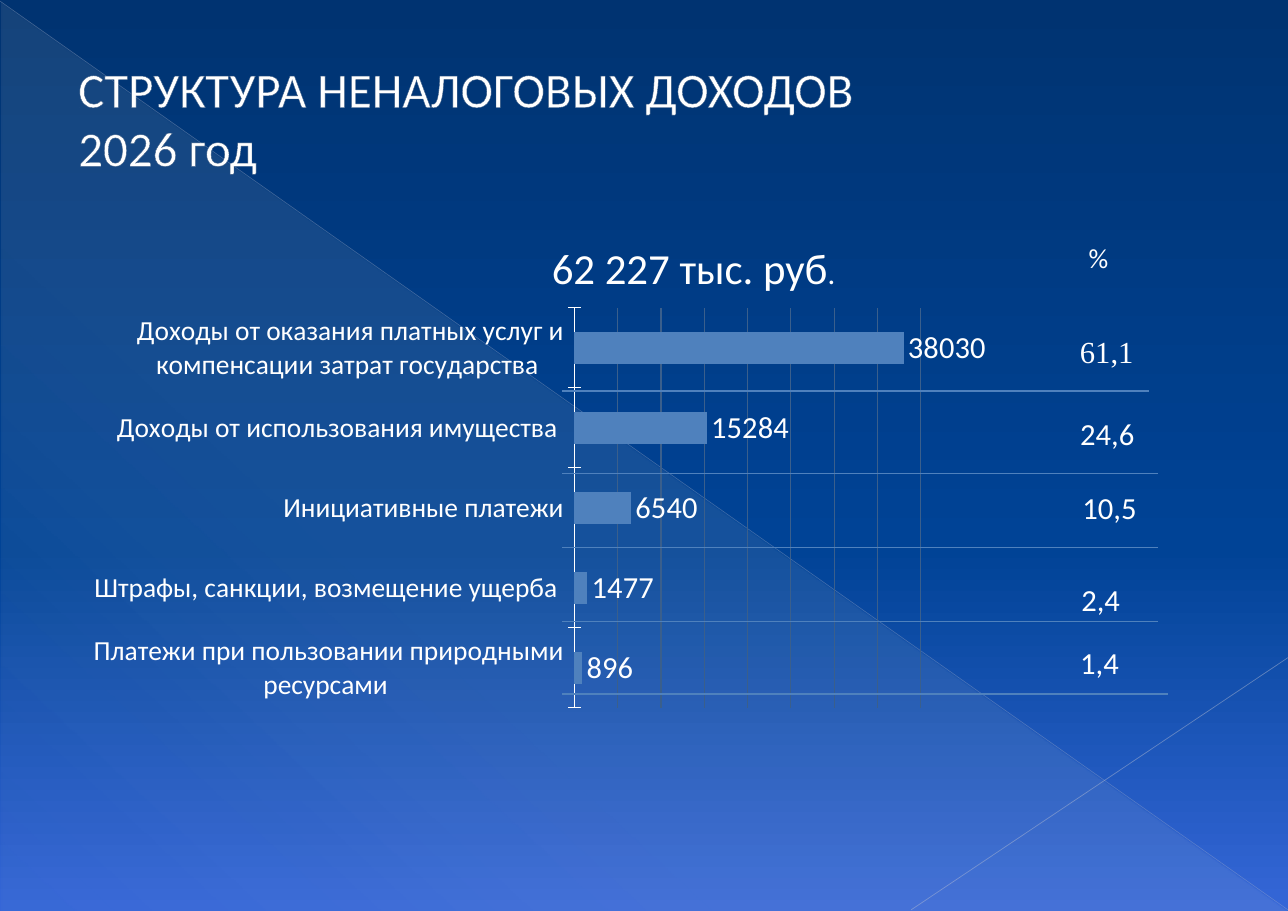
"""Build a slide showing the structure of non-tax revenue for 2026."""
from dataclasses import dataclass
from typing import NamedTuple

from lxml import etree
from pptx import Presentation
from pptx.chart.data import CategoryChartData
from pptx.dml.color import RGBColor
from pptx.enum.chart import XL_CHART_TYPE, XL_LABEL_POSITION, XL_TICK_MARK
from pptx.enum.shapes import MSO_CONNECTOR, MSO_SHAPE
from pptx.enum.text import MSO_ANCHOR, MSO_AUTO_SIZE, PP_ALIGN
from pptx.oxml import parse_xml
from pptx.oxml.ns import nsdecls, qn
from pptx.util import Emu, Inches, Pt

BARS = XL_CHART_TYPE.BAR_CLUSTERED
OUTSIDE_END = XL_LABEL_POSITION.OUTSIDE_END
CROSS = XL_TICK_MARK.CROSS
STRAIGHT = MSO_CONNECTOR.STRAIGHT
TRIANGLE = MSO_SHAPE.RIGHT_TRIANGLE
MIDDLE = MSO_ANCHOR.MIDDLE
GROW = MSO_AUTO_SIZE.SHAPE_TO_FIT_TEXT
LEFT, CENTER = PP_ALIGN.LEFT, PP_ALIGN.CENTER

WIDTH, HEIGHT = Inches(11.69), Inches(8.27)
RULE_START = 43.63


class Stop(NamedTuple):
    position: int
    color: str
    opacity: int = 100


class Area(NamedTuple):
    """A rectangle in percent of the slide's width and height."""
    left: float
    top: float
    width: float
    height: float


class Stroke(NamedTuple):
    """A straight line in percent of the slide's width and height."""
    start: tuple[float, float]
    end: tuple[float, float]
    color: str
    weight: float
    opacity: int = 100


class Income(NamedTuple):
    label: str
    amount: int
    share: str
    share_area: Area
    rule_row: float
    rule_end: float
    font: str


@dataclass(frozen=True)
class Theme:
    font: str = "Calibri"
    serif: str = "Times New Roman"
    text: str = "FFFFFF"
    outline: str = "375983"
    accent: str = "4F81BD"
    grid: str = "3A5F8C"
    title_size: int = 32
    total_size: int = 28
    value_size: int = 20
    label_size: int = 18
    chart_size: int = 16
    sky: tuple[Stop, ...] = (Stop(0, "003371"), Stop(60, "004396"), Stop(100, "3566D7"))
    veil: tuple[Stop, ...] = (Stop(0, "EEECE1", 10), Stop(70, "EEECE1", 8), Stop(100, "EEECE1", 1))


THEME = Theme()
INCOMES = (
    Income("Доходы от оказания платных услуг и компенсации затрат государства ", 38030,
           "61,1", Area(82.98, 35.91, 5.9, 5.32), 42.93, 89.22, THEME.serif),
    Income("Доходы от использования имущества ", 15284,
           "24,6", Area(82.98, 44.98, 5.99, 5.32), 51.99, 89.91, THEME.font),
    Income("Инициативные платежи", 6540,
           "10,5", Area(83.15, 53.08, 5.99, 5.32), 60.1, 89.91, THEME.font),
    Income("Штрафы, санкции, возмещение ущерба ", 1477,
           "2,4", Area(83.06, 63.12, 4.79, 5.32), 68.2, 89.91, THEME.font),
    Income("Платежи при пользовании природными ресурсами ", 896,
           "1,4", Area(82.98, 70.13, 4.79, 5.32), 76.18, 90.68, THEME.font),
)
BACKDROP_LINES = (
    Stroke((0, 0.12), (100, 99.88), "ADB6CE", 0.39, 35),
    Stroke((100, 72.19), (70.74, 99.88), "B6BED3", 0.47, 45),
)


def across(percent: float) -> Emu:
    return Emu(round(WIDTH * percent / 100))


def down(percent: float) -> Emu:
    return Emu(round(HEIGHT * percent / 100))


def place(area: Area) -> tuple[Emu, Emu, Emu, Emu]:
    return across(area.left), down(area.top), across(area.width), down(area.height)


def add_alpha(color, opacity: int) -> None:
    etree.SubElement(color, qn("a:alpha"), val=str(opacity * 1000))


def paint_gradient(owner, fill, stops: tuple[Stop, ...], angle: int) -> None:
    fill.gradient()
    gradient = owner.element.find(".//" + qn("a:gradFill"))
    for child in list(gradient):
        gradient.remove(child)
    stop_list = etree.SubElement(gradient, qn("a:gsLst"))
    for stop in stops:
        mark = etree.SubElement(stop_list, qn("a:gs"), pos=str(stop.position * 1000))
        add_alpha(etree.SubElement(mark, qn("a:srgbClr"), val=stop.color), stop.opacity)
    etree.SubElement(gradient, qn("a:lin"), ang=str(angle * 60000), scaled="0")


def style_font(font, size: float, name: str = THEME.font) -> None:
    font.size, font.name = Pt(size), name
    font.color.rgb = RGBColor.from_string(THEME.text)


def add_text(page, area: Area, text: str, *, size: float, font: str = THEME.font,
             align=CENTER, wrap: bool = False, tail: str = ""):
    box = page.shapes.add_textbox(*place(area))
    frame = box.text_frame
    frame.word_wrap = wrap
    if not wrap:
        frame.auto_size = GROW
    para = frame.paragraphs[0]
    para.text, para.alignment = text, align
    for span in para.runs:
        style_font(span.font, size, font)
    if tail:
        span = para.add_run()
        span.text = tail
        style_font(span.font, THEME.value_size, font)
    return box


def add_line(page, stroke: Stroke) -> None:
    (x1, y1), (x2, y2) = stroke.start, stroke.end
    line = page.shapes.add_connector(STRAIGHT, across(x1), down(y1), across(x2), down(y2))
    line.line.width = Pt(stroke.weight)
    line.line.color.rgb = RGBColor.from_string(stroke.color)
    add_alpha(line.element.find(".//" + qn("a:srgbClr")), stroke.opacity)
    etree.SubElement(line.element.spPr, qn("a:effectLst"))


def add_backdrop(page) -> None:
    paint_gradient(page, page.background.fill, THEME.sky, 90)
    veil = page.shapes.add_shape(TRIANGLE, *place(Area(0.09, 0.24, 99.91, 99.76)))
    veil.shadow.inherit = False
    veil.line.fill.background()
    paint_gradient(veil, veil.fill, THEME.veil, 133)
    for stroke in BACKDROP_LINES:
        add_line(page, stroke)


def add_title(page) -> None:
    box = add_text(page, Area(0, 2.66, 90.08, 20.44), "СТРУКТУРА НЕНАЛОГОВЫХ ДОХОДОВ \n2026 год",
                   size=THEME.title_size, align=LEFT, wrap=True)
    frame = box.text_frame
    frame.vertical_anchor = MIDDLE
    frame.margin_left, frame.margin_right = Inches(0.71), Inches(0.11)
    for properties in box.element.iter(qn("a:rPr")):
        properties.insert(0, parse_xml(
            f'<a:ln {nsdecls("a")} w="6350"><a:solidFill>'
            f'<a:srgbClr val="{THEME.outline}"/></a:solidFill></a:ln>'))


def add_income_chart(page) -> None:
    data = CategoryChartData(number_format="0")
    data.categories = [income.label for income in reversed(INCOMES)]
    data.add_series("Series 1", [income.amount for income in reversed(INCOMES)])
    chart = page.shapes.add_chart(BARS, *place(Area(7.27, 32.89, 69.29, 45.71)), data).chart
    chart.has_title = chart.has_legend = False
    style_font(chart.font, THEME.chart_size)
    plot = chart.plots[0]
    plot.gap_width, plot.vary_by_categories, plot.has_data_labels = 150, False, True
    labels = plot.data_labels
    labels.show_value, labels.position = True, OUTSIDE_END
    labels.number_format, labels.number_format_is_linked = "0", False
    style_font(labels.font, THEME.value_size)
    bars = plot.series[0].format.fill
    bars.solid()
    bars.fore_color.rgb = RGBColor.from_string(THEME.accent)
    names, amounts = chart.category_axis, chart.value_axis
    names.major_tick_mark = CROSS
    names.format.line.color.rgb = RGBColor.from_string(THEME.text)
    style_font(names.tick_labels.font, THEME.label_size)
    amounts.visible = False
    amounts.minimum_scale, amounts.maximum_scale, amounts.major_unit = 0, 40000, 5000
    grid = amounts.major_gridlines.format.line
    grid.color.rgb, grid.width = RGBColor.from_string(THEME.grid), Pt(0.75)
    area = chart.element.find(".//" + qn("c:plotArea"))
    for old in area.findall(qn("c:layout")):
        area.remove(old)
    layout = etree.Element(qn("c:layout"))
    area.insert(0, layout)
    manual = etree.SubElement(layout, qn("c:manualLayout"))
    settings = {"layoutTarget": "inner", "xMode": "edge", "yMode": "edge",
                "x": "0.54", "y": "0.02", "w": "0.39", "h": "0.96"}
    for tag, value in settings.items():
        etree.SubElement(manual, qn(f"c:{tag}"), val=value)


def main() -> None:
    deck = Presentation()
    deck.slide_width, deck.slide_height = WIDTH, HEIGHT
    page = deck.slides.add_slide(deck.slide_layouts[6])
    add_backdrop(page)
    add_title(page)
    add_income_chart(page)
    add_text(page, Area(41.83, 25.88, 24.04, 6.89), "62 227 тыс. руб",
             size=THEME.total_size, tail=".")
    add_text(page, Area(83.66, 25.88, 3.25, 4.84), "%", size=THEME.label_size)
    for income in INCOMES:
        add_text(page, income.share_area, income.share, size=THEME.value_size, font=income.font)
        add_line(page, Stroke((RULE_START, income.rule_row), (income.rule_end, income.rule_row),
                              THEME.accent, 0.75))
    deck.save("out.pptx")


if __name__ == "__main__":
    main()
